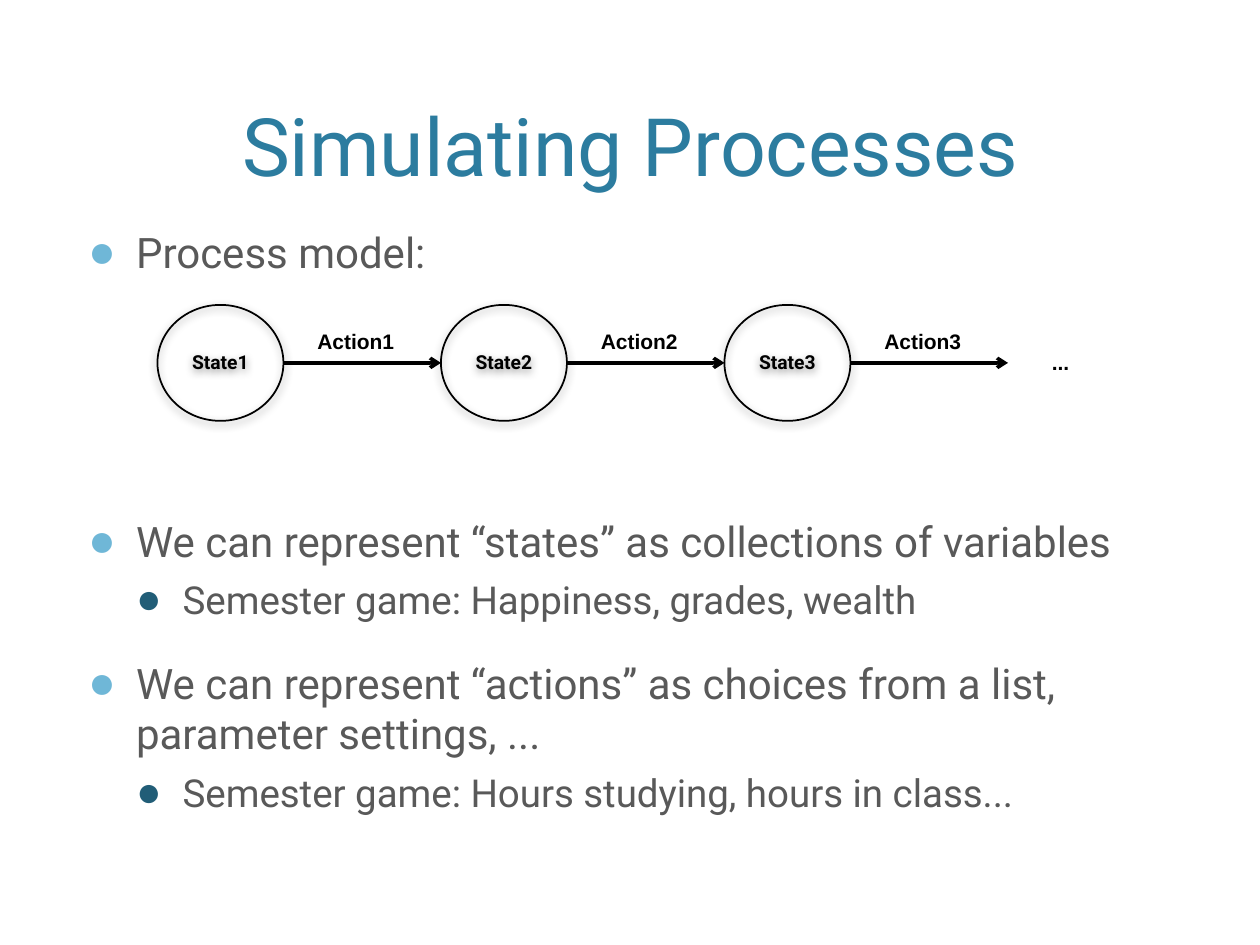
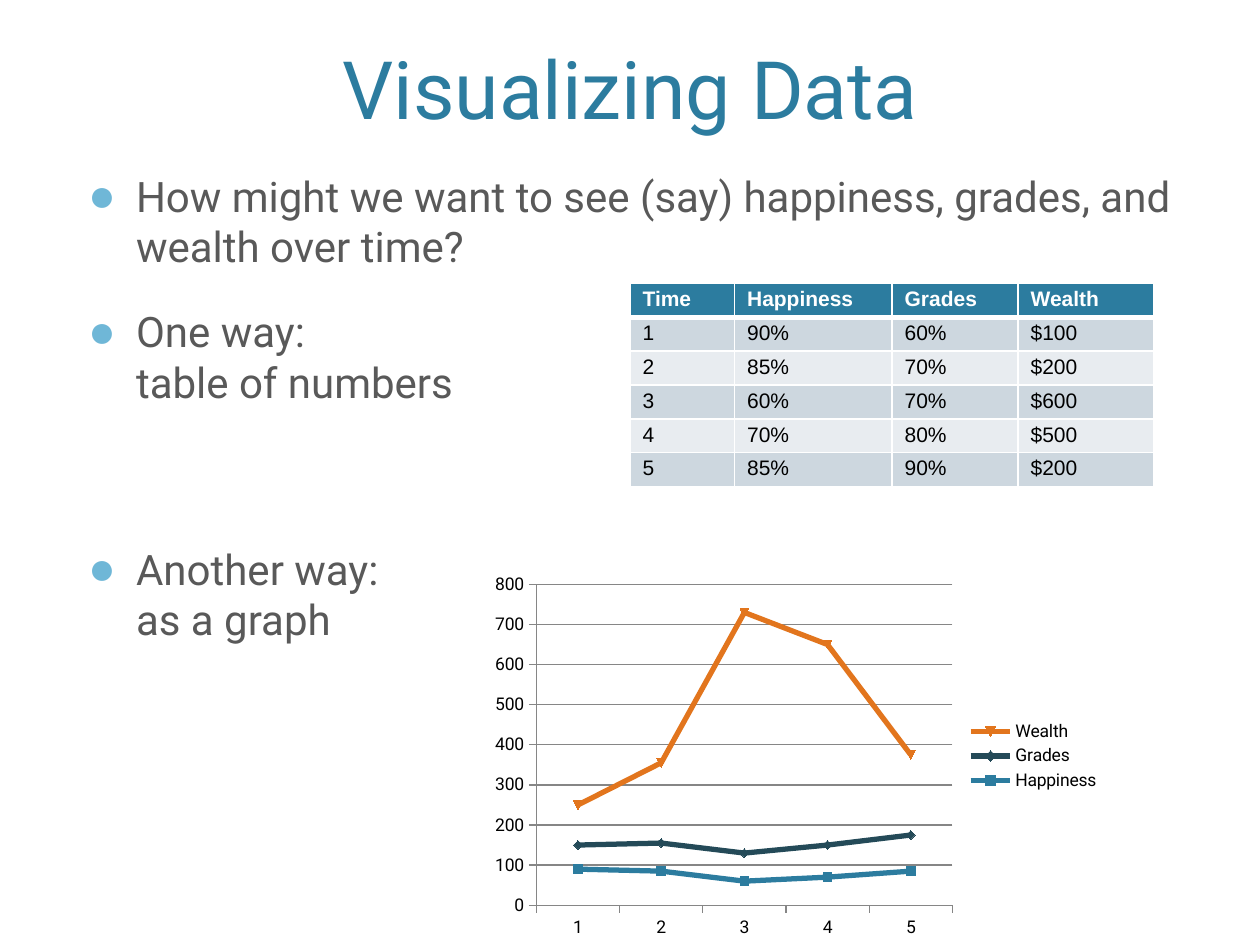
from lxml import etree
from pptx import Presentation
from pptx.chart.data import CategoryChartData
from pptx.dml.color import RGBColor
from pptx.enum.chart import XL_CHART_TYPE, XL_LEGEND_POSITION, XL_TICK_MARK
from pptx.enum.shapes import MSO_CONNECTOR, MSO_SHAPE
from pptx.enum.text import MSO_ANCHOR, MSO_AUTO_SIZE, PP_ALIGN
from pptx.oxml.ns import qn
from pptx.util import Inches, Pt

CENTER = PP_ALIGN.CENTER
LEFT = PP_ALIGN.LEFT
BOTTOM = MSO_ANCHOR.BOTTOM
MIDDLE = MSO_ANCHOR.MIDDLE
NO_AUTOFIT = MSO_AUTO_SIZE.NONE
FIT_SHAPE = MSO_AUTO_SIZE.SHAPE_TO_FIT_TEXT
STRAIGHT = MSO_CONNECTOR.STRAIGHT
OVAL = MSO_SHAPE.OVAL
STACKED_LINES = XL_CHART_TYPE.LINE_MARKERS_STACKED
LEGEND_RIGHT = XL_LEGEND_POSITION.RIGHT
TICK_OUTSIDE = XL_TICK_MARK.OUTSIDE


class Theme:
    font = "Roboto"
    label_font = "Arial"
    accent = RGBColor.from_string("2C7C9F")
    body = RGBColor.from_string("595959")
    black = RGBColor.from_string("000000")
    white = RGBColor.from_string("FFFFFF")
    grid = RGBColor.from_string("868686")
    bullets = ("6FB7D7", "215D77")
    bands = (RGBColor.from_string("CDD7DF"), RGBColor.from_string("E8ECF0"))
    series = (accent, RGBColor.from_string("244A58"), RGBColor.from_string("E2751D"))
    title_size = Pt(46)
    body_sizes = (Pt(24), Pt(22))
    state_size = Pt(11)
    label_size = Pt(12)
    chart_size = Pt(10)
    indents = (0.38, 0.75)
    hanging = (0.38, 0.37)


presentation = Presentation()
presentation.slide_width = Inches(10)
presentation.slide_height = Inches(7.5)


def add_list_slide(title_text, title_top, items):
    slide = presentation.slides.add_slide(presentation.slide_layouts[1])
    title, body = slide.placeholders
    title.left, title.top = Inches(0.6), Inches(title_top)
    title.width, title.height = Inches(8.8), Inches(1.46)
    body.left, body.top = Inches(0.6), Inches(title_top + 1.63)
    body.width, body.height = Inches(8.8), Inches(4.75)

    title.text_frame.text = title_text
    title.text_frame.vertical_anchor = BOTTOM
    title.text_frame.auto_size = NO_AUTOFIT
    paragraph = title.text_frame.paragraphs[0]
    paragraph.alignment = CENTER
    paragraph.font.name = Theme.font
    paragraph.font.size = Theme.title_size
    paragraph.font.color.rgb = Theme.accent

    body.text_frame.text = "\n".join(text for text, level, space in items)
    body.text_frame.auto_size = NO_AUTOFIT
    for paragraph, (text, level, space) in zip(body.text_frame.paragraphs, items):
        paragraph.level = level
        paragraph.space_before = Pt(space)
        for run in paragraph.runs:
            run.font.name = Theme.font
            run.font.size = Theme.body_sizes[level]
            run.font.color.rgb = Theme.body
        properties = paragraph._p.get_or_add_pPr()
        properties.set("marL", str(Inches(Theme.indents[level])))
        properties.set("indent", str(-Inches(Theme.hanging[level])))
        color = etree.SubElement(properties, qn("a:buClr"))
        etree.SubElement(color, qn("a:srgbClr"), val=Theme.bullets[level])
        etree.SubElement(properties, qn("a:buSzPct"), val="110000")
        etree.SubElement(properties, qn("a:buFont"), typeface=Theme.label_font)
        etree.SubElement(properties, qn("a:buChar"), char="●")
    return slide


def write_label(text_frame, text, font, size, color, bold=True, alignment=LEFT):
    text_frame.text = text
    paragraph = text_frame.paragraphs[0]
    paragraph.alignment = alignment
    paragraph.line_spacing = 0.9
    run = paragraph.runs[0]
    run.font.name = font
    run.font.size = size
    run.font.bold = bold
    run.font.color.rgb = color


slide = add_list_slide("Simulating Processes", 0.12, [
    ("Process model:", 0, 20),
    ("We can represent “states” as collections of variables", 0, 136),
    ("Semester game: Happiness, grades, wealth", 1, 6),
    ("We can represent “actions” as choices from a list, parameter settings, ...", 0, 20),
    ("Semester game: Hours studying, hours in class...", 1, 6),
])

state_left, state_pitch, middle = 1.25, 2.25, 2.88
labels = []
for index in range(3):
    left = state_left + index * state_pitch
    state = slide.shapes.add_shape(OVAL, Inches(left), Inches(middle - 0.46), Inches(1), Inches(0.92))
    state.fill.background()
    state.line.color.rgb = Theme.black
    state.line.width = Pt(1)
    state.shadow.inherit = False
    effects = state.element.spPr.find(qn("a:effectLst"))
    shadow = etree.SubElement(effects, qn("a:outerShdw"), blurRad=str(Pt(5)), dist=str(Pt(2)),
                              dir="5400000", rotWithShape="0")
    shadow_color = etree.SubElement(shadow, qn("a:srgbClr"), val="000000")
    etree.SubElement(shadow_color, qn("a:alpha"), val="40000")
    state.text_frame.vertical_anchor = MIDDLE
    write_label(state.text_frame, f"State{index + 1}", Theme.font, Theme.state_size, Theme.black,
                alignment=CENTER)

    arrow = slide.shapes.add_connector(STRAIGHT, Inches(left + 1), Inches(middle),
                                       Inches(left + state_pitch), Inches(middle))
    arrow.line.color.rgb = Theme.black
    arrow.line.width = Pt(2)
    arrow_properties = arrow.element.spPr
    etree.SubElement(arrow_properties.find(qn("a:ln")), qn("a:tailEnd"), type="arrow")
    etree.SubElement(arrow_properties, qn("a:effectLst"))
    labels.append((f"Action{index + 1}", left + 1.17, middle - 0.3, 0.83))

labels.append(("...", 8.25, 2.75, 0.34))
for text, left, top, width in labels:
    label = slide.shapes.add_textbox(Inches(left), Inches(top), Inches(width), Inches(0.29))
    label.text_frame.word_wrap = False
    label.text_frame.auto_size = FIT_SHAPE
    write_label(label.text_frame, text, Theme.label_font, Theme.label_size, Theme.black)


slide = add_list_slide("Visualizing Data", -0.33, [
    ("How might we want to see (say) happiness, grades, and wealth over time?", 0, 20),
    ("One way: \vtable of numbers", 0, 20),
    ("Another way: \vas a graph", 0, 78),
])

headings = ("Time", "Happiness", "Grades", "Wealth")
semester = [
    (1, 90, 60, 100),
    (2, 85, 70, 200),
    (3, 60, 70, 600),
    (4, 70, 80, 500),
    (5, 85, 90, 200),
]
table_rows = [headings] + [
    (f"{time}", f"{happiness}%", f"{grades}%", f"${wealth}")
    for time, happiness, grades, wealth in semester
]
table = slide.shapes.add_table(len(table_rows), len(headings), Inches(5), Inches(2.25),
                               Inches(4.16), Inches(1.56)).table
for column, width in zip(table.columns, (0.83, 1.25, 1, 1.08)):
    column.width = Inches(width)
for row_index, values in enumerate(table_rows):
    is_header = row_index == 0
    table.rows[row_index].height = Inches(0.26)
    for column_index, value in enumerate(values):
        cell = table.cell(row_index, column_index)
        write_label(cell.text_frame, value, Theme.label_font, Theme.label_size,
                    Theme.white if is_header else Theme.black, bold=is_header)
        borders = {"L": 1, "R": 1, "T": 3 if row_index == 1 else 1, "B": 3 if is_header else 1}
        cell_properties = cell._tc.get_or_add_tcPr()
        for side, width in borders.items():
            border = etree.SubElement(cell_properties, qn(f"a:ln{side}"), w=str(Pt(width)))
            border_fill = etree.SubElement(border, qn("a:solidFill"))
            etree.SubElement(border_fill, qn("a:srgbClr"), val=str(Theme.white))
        cell.fill.solid()
        cell.fill.fore_color.rgb = Theme.accent if is_header else Theme.bands[(row_index - 1) % 2]

times, *measures = zip(*semester)
chart_data = CategoryChartData()
chart_data.categories = [str(time) for time in times]
for heading, values in zip(headings[1:], measures):
    chart_data.add_series(heading, values)
chart = slide.shapes.add_chart(STACKED_LINES, Inches(3.83), Inches(4.5), Inches(5), Inches(3),
                               chart_data).chart
chart.has_title = False
chart.font.name = Theme.font
chart.font.size = Theme.chart_size
chart.font.color.rgb = Theme.black
chart.has_legend = True
chart.legend.position = LEGEND_RIGHT
chart.legend.include_in_layout = False
chart.plots[0].vary_by_categories = False
for series, color in zip(chart.plots[0].series, Theme.series):
    series.smooth = False
    series.format.line.color.rgb = color
    series.format.line.width = Pt(3)
for axis in (chart.category_axis, chart.value_axis):
    axis.major_tick_mark = TICK_OUTSIDE
    axis.format.line.color.rgb = Theme.grid
chart.value_axis.has_major_gridlines = True
chart.value_axis.major_gridlines.format.line.color.rgb = Theme.grid

presentation.save("out.pptx")
